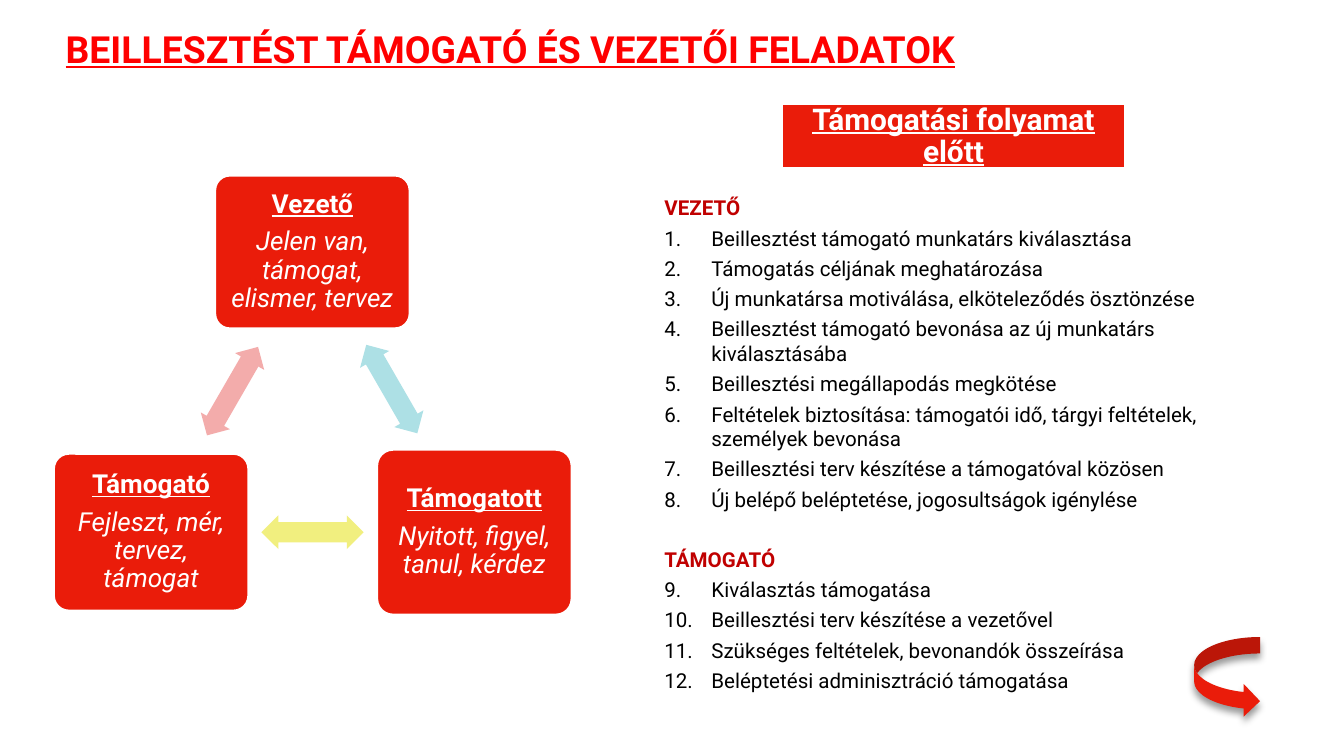
import pptx
import pptx.util
import pptx.dml.color
import pptx.enum.shapes
import pptx.enum.text
from lxml import etree

FONT = "Roboto"
RED, WHITE, BLACK, DARK = "EA1C0A", "FFFFFF", "000000", "C00000"
UNIT = 0.1  # grid step in inches: 100 columns across a 16:9 slide

TITLE = "BEILLESZTÉST TÁMOGATÓ ÉS VEZETŐI FELADATOK"
PHASE = "Támogatási folyamat előtt"
# name, tasks, centre column, centre row, height
CARDS = [
    ("Vezető", "Jelen van, támogat, elismer, tervez", 23.25, 18.75, 11.5),
    ("Támogatott", "Nyitott, figyel, tanul, kérdez", 35.3, 39.6, 12.4),
    ("Támogató", "Fejleszt, mér, tervez, támogat", 11.25, 39.6, 11.8),
]
# colour, turn, centre column, centre row
LINKS = [
    ("ADE0E5", 60, 29.15, 28.95),
    ("F1EF7F", 180, 23.25, 39.6),
    ("F3ACAB", 300, 17.3, 29.1),
]
DUTIES = [
    ("VEZETŐ", [
        "Beillesztést támogató munkatárs kiválasztása",
        "Támogatás céljának meghatározása",
        "Új munkatársa motiválása, elköteleződés ösztönzése",
        "Beillesztést támogató bevonása az új munkatárs kiválasztásába",
        "Beillesztési megállapodás megkötése",
        "Feltételek biztosítása: támogatói idő, tárgyi feltételek, személyek bevonása",
        "Beillesztési terv készítése a támogatóval közösen",
        "Új belépő beléptetése, jogosultságok igénylése",
    ]),
    ("TÁMOGATÓ", [
        "Kiválasztás támogatása",
        "Beillesztési terv készítése a vezetővel",
        "Szükséges feltételek, bevonandók összeírása",
        "Beléptetési adminisztráció támogatása",
    ]),
]

Pt = pptx.util.Pt
KIND = pptx.enum.shapes.MSO_SHAPE
ALIGN = pptx.enum.text.PP_ALIGN
ANCHOR = pptx.enum.text.MSO_ANCHOR

deck = pptx.Presentation()
deck.slide_width = pptx.util.Inches(10)
deck.slide_height = deck.slide_width * 9 // 16
slide = deck.slides.add_slide(deck.slide_layouts[6])


def grid(*steps):
    return [pptx.util.Inches(n * UNIT) for n in steps]


def paint(hue):
    return pptx.dml.color.RGBColor.from_string(hue)


def node(root, tag, **attrs):
    ns = "http://schemas.openxmlformats.org/drawingml/2006/main"
    return etree.SubElement(root, "{%s}%s" % (ns, tag), attrs)


def shape(kind, box, fill, edge=None, adj=()):
    item = slide.shapes.add_shape(kind, *grid(*box))
    item.shadow.inherit = False
    item.fill.solid()
    item.fill.fore_color.rgb = paint(fill)
    if edge:
        item.line.color.rgb = paint(edge)
        item.line.width = Pt(2)
    else:
        item.line.fill.background()
    for i, share in enumerate(adj):
        item.adjustments[i] = share
    return item


def frame(item, inset=None, anchor=ANCHOR.MIDDLE):
    text = item.text_frame
    text.word_wrap = True
    text.vertical_anchor = anchor
    if inset:
        pad, = grid(inset)
        text.margin_left = text.margin_right = pad
        text.margin_top = text.margin_bottom = pad
    return text


def write(text, words, size, hue, align=ALIGN.LEFT, lead=None, after=0, **style):
    """Add a paragraph, taking the first one while it is empty."""
    para = text.paragraphs[0]
    if para.runs:
        para = text.add_paragraph()
    para.alignment = align
    para.space_after = Pt(after)
    if lead:
        para.line_spacing = lead
    run = para.add_run()
    run.text = words
    run.font.name, run.font.size = FONT, Pt(size)
    run.font.color.rgb = paint(hue)
    for key, value in style.items():
        setattr(run.font, key, value)
    return para


def number(para, start):
    props = para._p.get_or_add_pPr()
    dent, = grid(3.5)
    props.set("marL", str(dent))
    props.set("indent", str(-dent))
    node(node(props, "buClr"), "srgbClr", val=BLACK)
    node(props, "buFont", typeface="+mj-lt")
    node(props, "buAutoNum", type="arabicPeriod", startAt=str(start))


# Triangle of roles
for name, tasks, col, row, high in CARDS:
    wide = 14.6
    card = shape(KIND.ROUNDED_RECTANGLE, (col - wide / 2, row - high / 2, wide, high),
                 RED, WHITE, [0.1])
    text = frame(card, 0.6)
    look = dict(size=14, hue=WHITE, align=ALIGN.CENTER, lead=0.9, after=5)
    write(text, name, bold=True, underline=True, **look)
    write(text, tasks, italic=True, **look)

for hue, turn, col, row in LINKS:
    wide, high = 7.6, 2.5
    link = shape(KIND.LEFT_RIGHT_ARROW, (col - wide / 2, row - high / 2, wide, high),
                 hue, adj=[0.6, 0.5])
    link.rotation = turn

# Title
head = slide.shapes.add_textbox(*grid(3.9, 1.45, 68.4, 4.4))
write(frame(head, anchor=ANCHOR.TOP), TITLE, 20, "FF0000", lead=Pt(24),
      bold=True, underline=True)

# Numbered duties
text = frame(shape(KIND.RECTANGLE, (48.45, 12.7, 48, 40.65), WHITE))
start = 1
for role, jobs in DUTIES:
    para = write(text, role, 11, DARK, after=3, bold=True)
    if start > 1:
        para.space_before = Pt(16)
    for job in jobs:
        number(write(text, job, 11, BLACK, after=3), start)
    start += len(jobs)

# Phase banner
band = shape(KIND.RECTANGLE, (58.1, 7.7, 25.7, 4.9), RED, WHITE)
write(frame(band, 0.6), PHASE, 16, WHITE, ALIGN.CENTER, 0.9, 5.6,
      bold=True, underline=True)

# Turn arrow with a soft shadow
turn = shape(KIND.CURVED_RIGHT_ARROW, (88.85, 47.4, 4.9, 6), RED)
effects = turn._element.spPr.find(pptx.oxml.ns.qn("a:effectLst"))
cast = node(effects, "outerShdw", blurRad=str(Pt(4)), dist=str(Pt(3)),
            dir="5400000", rotWithShape="0")
node(node(cast, "srgbClr", val=BLACK), "alpha", val="40000")

deck.save("out.pptx")
